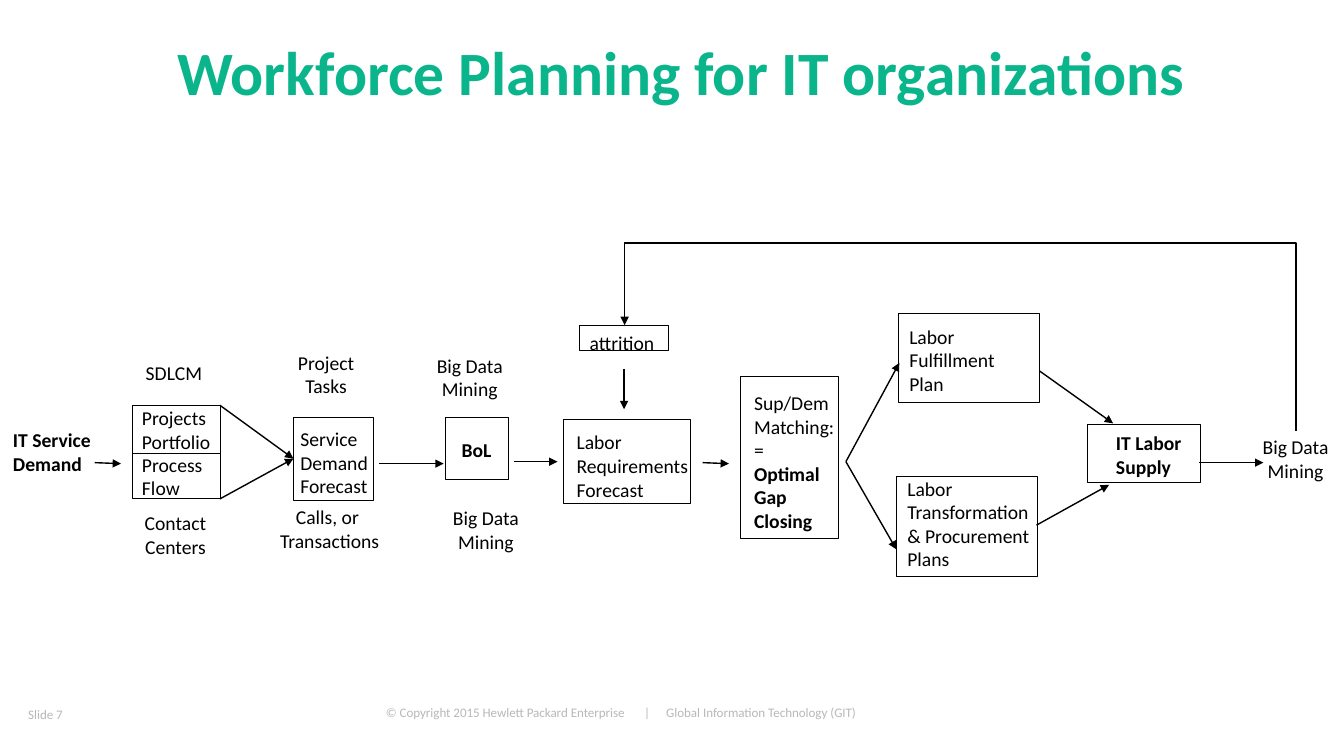
from lxml import etree
from pptx import Presentation
from pptx import util as u
from pptx.dml import color
from pptx.enum import shapes, text
from pptx.oxml import ns

FONT = "Calibri"
BLACK, GREEN, GRAY = "000000", "0AB58C", "B7B8B9"


def rgb(value):
    return color.RGBColor.from_string(value)


def sub(parent, tag, **attrs):
    return etree.SubElement(parent, ns.qn(tag), attrs)


def write(tf, lines, size=14, hue=BLACK, bold_from=None, align=None):
    for i, line in enumerate(lines):
        p = tf.paragraphs[0] if i == 0 else tf.add_paragraph()
        p.alignment = align
        r = p.add_run()
        r.text = line
        r.font.name = FONT
        r.font.size = u.Pt(size)
        r.font.bold = bold_from is not None and i >= bold_from
        r.font.color.rgb = rgb(hue)


def add_title(s, words):
    sp = s.shapes.title
    sp.left, sp.top = u.Inches(1.76), u.Inches(0.34)
    sp.width, sp.height = u.Inches(11.46), u.Inches(0.35)
    tf = sp.text_frame
    tf.auto_size = text.MSO_AUTO_SIZE.NONE
    tf.margin_left = tf.margin_top = tf.margin_right = tf.margin_bottom = 0
    tf.vertical_anchor = text.MSO_ANCHOR.TOP
    write(tf, [words], 44, GREEN, 0, text.PP_ALIGN.LEFT)


def add_label(s, at, lines, bold_from=None, align=text.PP_ALIGN.LEFT):
    tf = s.shapes.add_textbox(*map(u.Inches, at)).text_frame
    tf.word_wrap = False
    tf.auto_size = text.MSO_AUTO_SIZE.SHAPE_TO_FIT_TEXT
    write(tf, lines, bold_from=bold_from, align=align)


def add_box(s, at, lines=()):
    sp = s.shapes.add_shape(shapes.MSO_SHAPE.RECTANGLE, *map(u.Inches, at))
    sp.shadow.inherit = False
    sp.fill.background()
    sp.line.color.rgb = rgb(BLACK)
    sp.line.width = u.Pt(0.75)
    tf = sp.text_frame
    tf.word_wrap = False
    tf.vertical_anchor = text.MSO_ANCHOR.MIDDLE
    write(tf, lines, align=text.PP_ALIGN.LEFT)


def add_arrow(s, start, end, kind=shapes.MSO_CONNECTOR.STRAIGHT):
    cx = s.shapes.add_connector(kind, *map(u.Inches, start + end))
    cx.line.color.rgb = rgb(BLACK)
    cx.line.width = u.Pt(1)
    sub(cx.line._get_or_add_ln(), "a:tailEnd", type="triangle")
    sub(cx._element.spPr, "a:effectLst")
    return cx


def add_feedback(s):
    cx = add_arrow(s, (9, 7.08), (10.05, 0.42), shapes.MSO_CONNECTOR.ELBOW)
    spPr = cx._element.spPr
    spPr.find(ns.qn("a:xfrm")).set("rot", str(270 * 60000))
    guides = spPr.find(ns.qn("a:prstGeom")).find(ns.qn("a:avLst"))
    sub(guides, "a:gd", name="adj1", fmla="val 177700")


def add_footer(s):
    tf = s.shapes.add_textbox(*map(u.Inches, (3.73, 6.94, 5.2, 0.33))).text_frame
    tf.word_wrap = True
    tabs = sub(tf.paragraphs[0]._p.get_or_add_pPr(), "a:tabLst")
    for stop in (2.56, 2.78):
        sub(tabs, "a:tab", pos=str(u.Inches(stop)), algn="l")
    write(tf, ["© Copyright 2015 Hewlett Packard Enterprise\t|\tGlobal Information Technology (GIT)"],
          9.3, GRAY)
    tf = s.shapes.add_textbox(*map(u.Inches, (0.28, 6.98, 0.47, 0.22))).text_frame
    tf.word_wrap = False
    tf.margin_left = 0
    tf.vertical_anchor = text.MSO_ANCHOR.MIDDLE
    write(tf, ["Slide 7"], 9.3, GRAY)


def main():
    prs = Presentation()
    prs.slide_width, prs.slide_height = u.Inches(13.33), u.Inches(7.5)
    s = prs.slides.add_slide(prs.slide_layouts[5])
    add_footer(s)
    add_title(s, "Workforce Planning for IT organizations")

    add_box(s, (1.31, 4.02, 0.88, 0.48), ["Projects", "Portfolio"])
    add_box(s, (1.31, 4.5, 0.88, 0.45), ["Process", "Flow"])
    add_label(s, (0.03, 4.2, 0.98, 0.57), ["IT Service", "Demand"], 0)

    stages = [
        ((2.91, 4.14, 0.79, 0.83), (2.88, 4.19, 0.88, 0.81), ["Service", "Demand", "Forecast"], None),
        ((4.42, 4.14, 0.62, 0.62), (4.48, 4.3, 0.5, 0.34), ["BoL"], 0),
        ((5.59, 4.16, 1.26, 0.84), (5.62, 4.22, 1.32, 0.81), ["Labor", "Requirements", "Forecast"], None),
        ((5.75, 3.23, 0.88, 0.25), (5.75, 3.23, 0.88, 0.34), ["attrition"], None),
        ((7.34, 3.74, 0.98, 1.6), (7.38, 3.83, 1.01, 1.51),
         ["Sup/Dem", "Matching:", "=", "Optimal", "Gap", "Closing"], 3),
        ((8.91, 3.11, 1.4, 0.88), (8.92, 3.17, 1.06, 0.81), ["Labor", "Fulfillment", "Plan"], None),
        ((8.89, 4.73, 1.4, 0.99), (8.9, 4.68, 1.42, 1.04),
         ["Labor", "Transformation", "& Procurement", "Plans"], None),
        ((10.79, 4.21, 1.12, 0.58), (10.97, 4.23, 0.85, 0.57), ["IT Labor", "Supply"], 0),
    ]
    for box, label, lines, bold_from in stages:
        add_box(s, box)
        add_label(s, label, lines, bold_from)

    captions = [
        ((1.34, 3.53, 0.77, 0.34), ["SDLCM"]),
        ((1.33, 5.02, 0.82, 0.57), ["Contact", "Centers"]),
        ((2.85, 3.43, 0.77, 0.57), ["Project", "Tasks"]),
        ((2.67, 4.96, 1.2, 0.57), ["Calls, or ", "Transactions"]),
    ]
    captions += [((x, y, 0.86, 0.57), ["Big Data", "Mining"])
                 for x, y in ((4.39, 4.97), (4.23, 3.46), (12.42, 4.27))]
    for at, lines in captions:
        add_label(s, at, lines, align=text.PP_ALIGN.CENTER)

    arrows = [
        ((0.94, 4.59), (1.2, 4.6)),
        ((2.18, 4.02), (2.91, 4.55)),
        ((2.18, 4.95), (2.91, 4.55)),
        ((3.76, 4.6), (4.4, 4.6)),
        ((5.1, 4.58), (5.53, 4.58)),
        ((6.97, 4.59), (7.23, 4.6)),
        ((8.39, 4.58), (8.92, 3.6)),
        ((8.39, 4.58), (8.89, 5.45)),
        ((10.31, 3.68), (11.04, 4.2)),
        ((10.28, 5.21), (11, 4.81)),
        ((11.89, 4.59), (12.53, 4.59)),
        ((6.19, 3.66), (6.19, 4.06)),
    ]
    for start, end in arrows:
        add_arrow(s, start, end)
    add_feedback(s)
    prs.save("out.pptx")


if __name__ == "__main__":
    main()
